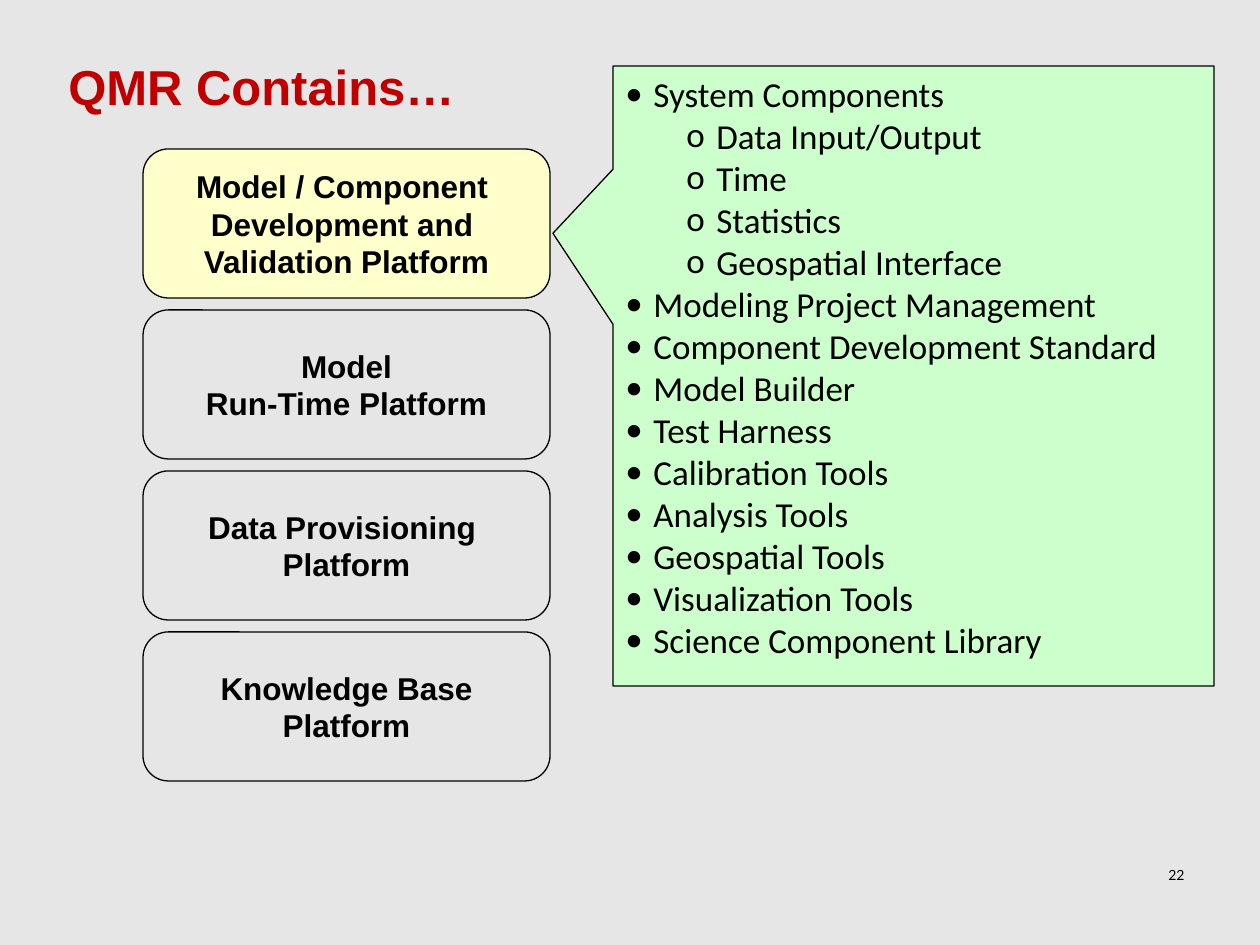
from dataclasses import dataclass

from lxml import etree
from pptx import Presentation
from pptx.dml.color import RGBColor
from pptx.enum.shapes import MSO_SHAPE
from pptx.enum.text import MSO_ANCHOR, PP_ALIGN
from pptx.oxml.ns import qn
from pptx.util import Pt

EMU_PER_PX = 914400 / 126

ROUNDED = MSO_SHAPE.ROUNDED_RECTANGLE
CALLOUT = MSO_SHAPE.RECTANGULAR_CALLOUT
LEFT, CENTER, RIGHT = PP_ALIGN.LEFT, PP_ALIGN.CENTER, PP_ALIGN.RIGHT
TOP, MIDDLE = MSO_ANCHOR.TOP, MSO_ANCHOR.MIDDLE

BLACK = RGBColor(0x00, 0x00, 0x00)
RED = RGBColor(0xC0, 0x00, 0x00)
GRAY = RGBColor(0xE6, 0xE6, 0xE6)
YELLOW = RGBColor(0xFF, 0xFF, 0xCC)
GREEN = RGBColor(0xCC, 0xFF, 0xCC)

TITLE_FONT = {"name": "Arial", "size": Pt(28), "bold": True}
PLATFORM_FONT = {"name": "Arial", "size": Pt(18), "bold": True}
CONTENT_FONT = {"name": "Calibri", "size": Pt(20), "bold": False}
NUMBER_FONT = {"name": "Lato", "size": Pt(8), "bold": False}


@dataclass(frozen=True)
class Box:
    left: int
    top: int
    width: int
    height: int

    def emu(self) -> tuple[int, ...]:
        return tuple(px(n) for n in (self.left, self.top, self.width, self.height))


@dataclass(frozen=True)
class Platform:
    lines: tuple[str, ...]
    fill: RGBColor = GRAY


@dataclass(frozen=True)
class Item:
    text: str
    level: int = 0


@dataclass(frozen=True)
class Bullet:
    char: str
    margin: int


BULLETS = (Bullet("•", 28), Bullet("o", 91))
HANGING = -30

PLATFORM_BOX = Box(143, 149, 407, 149)
PLATFORM_PITCH = 161
PLATFORMS = (
    Platform(("Model / Component ", "Development and ", "Validation Platform"), YELLOW),
    Platform(("Model", "Run-Time Platform")),
    Platform(("Data Provisioning ", "Platform")),
    Platform(("Knowledge Base", "Platform")),
)
CONTENTS = (
    Item("System Components"),
    Item("Data Input/Output", 1),
    Item("Time", 1),
    Item("Statistics", 1),
    Item("Geospatial Interface", 1),
    Item("Modeling Project Management"),
    Item("Component Development Standard"),
    Item("Model Builder"),
    Item("Test Harness"),
    Item("Calibration Tools"),
    Item("Analysis Tools"),
    Item("Geospatial Tools"),
    Item("Visualization Tools"),
    Item("Science Component Library"),
)


def px(length: int) -> int:
    return round(length * EMU_PER_PX)


def write(frame, lines, font: dict, color=BLACK, align=LEFT, anchor=TOP, wrap=True) -> None:
    frame.word_wrap = wrap
    frame.vertical_anchor = anchor
    for index, line in enumerate(lines):
        paragraph = frame.add_paragraph() if index else frame.paragraphs[0]
        paragraph.alignment = align
        run = paragraph.add_run()
        run.text = line
        for attribute, value in font.items():
            setattr(run.font, attribute, value)
        run.font.color.rgb = color


def add_label(slide, box: Box, text: str, font: dict, color=BLACK, align=LEFT) -> None:
    label = slide.shapes.add_textbox(*box.emu())
    write(label.text_frame, [text], font, color, align)


def add_panel(slide, kind, box: Box, fill: RGBColor, adjustments):
    panel = slide.shapes.add_shape(kind, *box.emu())
    panel.shadow.inherit = False
    panel.fill.solid()
    panel.fill.fore_color.rgb = fill
    panel.line.color.rgb = BLACK
    panel.line.width = Pt(0.75)
    for index, value in enumerate(adjustments):
        panel.adjustments[index] = value
    return panel


def add_platform(slide, row: int, platform: Platform) -> None:
    box = Box(PLATFORM_BOX.left, PLATFORM_BOX.top + row * PLATFORM_PITCH,
              PLATFORM_BOX.width, PLATFORM_BOX.height)
    panel = add_panel(slide, ROUNDED, box, platform.fill, [0.17])
    write(panel.text_frame, platform.lines, PLATFORM_FONT,
          align=CENTER, anchor=MIDDLE, wrap=False)


def set_bullet(paragraph, level: int) -> None:
    bullet = BULLETS[level]
    paragraph.level = level
    properties = paragraph._p.get_or_add_pPr()
    properties.set("marL", str(px(bullet.margin)))
    properties.set("indent", str(px(HANGING)))
    etree.SubElement(properties, qn("a:buFont")).set("typeface", CONTENT_FONT["name"])
    etree.SubElement(properties, qn("a:buChar")).set("char", bullet.char)


def add_contents(slide, box: Box, items: tuple[Item, ...]) -> None:
    callout = add_panel(slide, CALLOUT, box, GREEN, [-0.6, -0.23])
    write(callout.text_frame, [item.text for item in items], CONTENT_FONT)
    for paragraph, item in zip(callout.text_frame.paragraphs, items):
        set_bullet(paragraph, item.level)


def main() -> None:
    deck = Presentation()
    deck.slide_width, deck.slide_height = px(1260), px(945)
    slide = deck.slides.add_slide(deck.slide_layouts[6])
    slide.background.fill.solid()
    slide.background.fill.fore_color.rgb = GRAY

    add_label(slide, Box(56, 50, 508, 72), "QMR Contains…", TITLE_FONT, RED)
    for row, platform in enumerate(PLATFORMS):
        add_platform(slide, row, platform)
    add_contents(slide, Box(613, 66, 601, 620), CONTENTS)
    add_label(slide, Box(903, 860, 294, 66), "22", NUMBER_FONT, align=RIGHT)
    deck.save("out.pptx")


if __name__ == "__main__":
    main()
